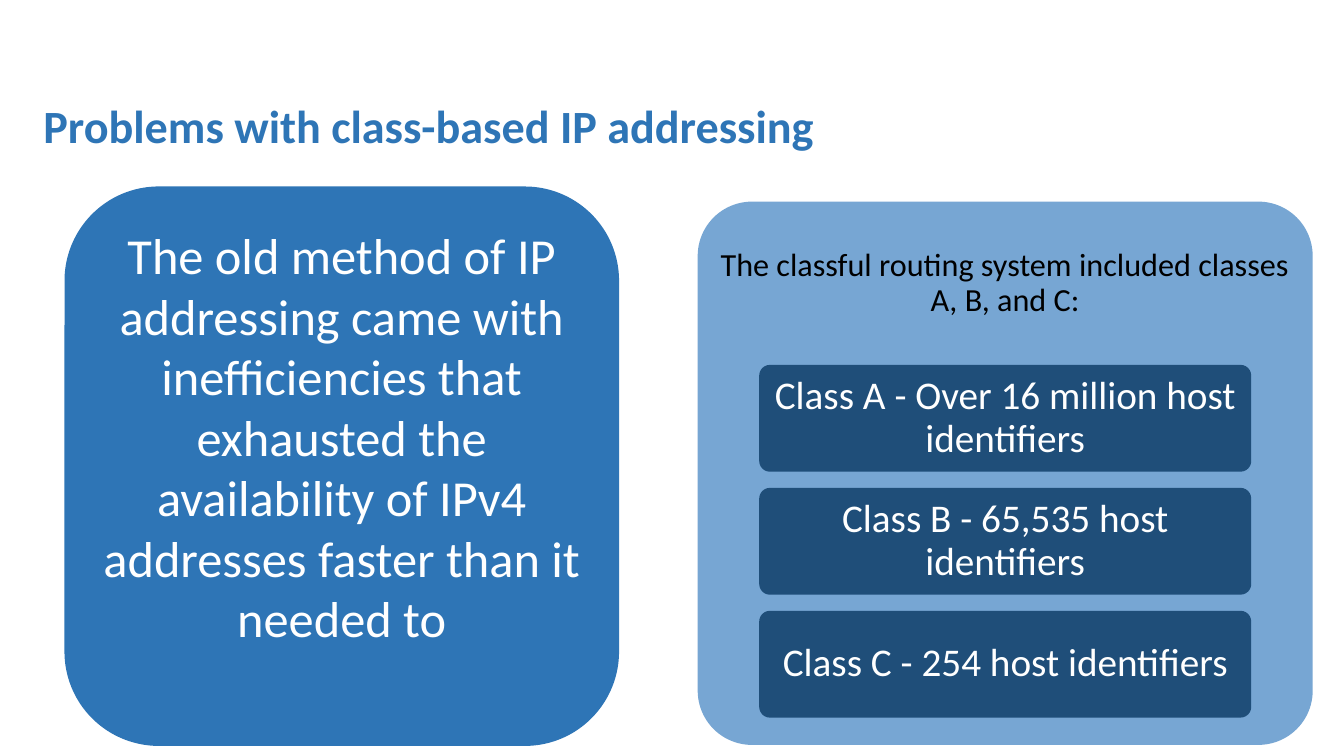
from dataclasses import dataclass

from pptx import Presentation
from pptx.dml.color import RGBColor
from pptx.enum.shapes import MSO_SHAPE
from pptx.enum.text import MSO_ANCHOR, PP_ALIGN
from pptx.util import Inches, Pt

TITLE = "Problems with class-based IP addressing"
PROBLEM = ("The old method of IP addressing came with inefficiencies that exhausted "
           "the availability of IPv4 addresses faster than it needed to")
CLASSES_HEADING = "The classful routing system included classes A, B, and C:"
CLASSES = [
    "Class A - Over 16 million host identifiers",
    "Class B - 65,535 host identifiers",
    "Class C - 254 host identifiers",
]


@dataclass(frozen=True)
class Theme:
    font: str = "Calibri"
    blue: str = "2E75B6"
    light_blue: str = "77A6D3"
    navy: str = "1F4E79"
    white: str = "FFFFFF"
    black: str = "000000"
    title_size: int = 33
    problem_size: int = 36
    heading_size: int = 23
    class_size: int = 28


THEME = Theme()
WIDTH, HEIGHT = 13.33, 7.5
TITLE_BOX = (0.33, 0.78, 12.68, 0.99)
PROBLEM_BOX = (0.64, 1.85, 5.5, 5.55)
PANEL_BOX = (6.92, 2, 6.1, 5.39)
CARD_SHARE = 0.8
CARD_TOP, CARD_HEIGHT, CARD_PITCH = 3.62, 1.06, 1.22


def write(shape, text, size, color, align=PP_ALIGN.CENTER, bold=False,
          line_spacing=0.9, margins=(0.1, 0.05, 0.1, 0.05)):
    """Fill the shape with one paragraph; margins run left, top, right, bottom."""
    frame = shape.text_frame
    frame.word_wrap = True
    frame.vertical_anchor = MSO_ANCHOR.MIDDLE
    (frame.margin_left, frame.margin_top,
     frame.margin_right, frame.margin_bottom) = map(Inches, margins)
    paragraph = frame.paragraphs[0]
    paragraph.alignment = align
    paragraph.line_spacing = line_spacing
    run = paragraph.add_run()
    run.text = text
    run.font.name = THEME.font
    run.font.size = Pt(size)
    run.font.bold = bold
    run.font.color.rgb = RGBColor.from_string(color)


def add_rounded_box(slide, box, fill, corner):
    shape = slide.shapes.add_shape(MSO_SHAPE.ROUNDED_RECTANGLE, *map(Inches, box))
    shape.adjustments[0] = corner
    shape.shadow.inherit = False
    shape.fill.solid()
    shape.fill.fore_color.rgb = RGBColor.from_string(fill)
    shape.line.fill.background()
    return shape


def main():
    presentation = Presentation()
    presentation.slide_width, presentation.slide_height = Inches(WIDTH), Inches(HEIGHT)
    slide = presentation.slides.add_slide(presentation.slide_layouts[5])

    title = slide.shapes.title
    title.left, title.top, title.width, title.height = map(Inches, TITLE_BOX)
    write(title, TITLE, THEME.title_size, THEME.blue, PP_ALIGN.LEFT, bold=True)

    panel = add_rounded_box(slide, PANEL_BOX, THEME.light_blue, 0.1)
    write(panel, CLASSES_HEADING, THEME.heading_size, THEME.black,
          margins=(0, 0, 0, 3.77))

    panel_left, _, panel_width, _ = PANEL_BOX
    card_width = panel_width * CARD_SHARE
    card_left = panel_left + (panel_width - card_width) / 2
    for row, text in enumerate(CLASSES):
        card_box = (card_left, CARD_TOP + row * CARD_PITCH, card_width, CARD_HEIGHT)
        card = add_rounded_box(slide, card_box, THEME.navy, 0.1)
        write(card, text, THEME.class_size, THEME.white,
              margins=(0.08, 0.06, 0.08, 0.06))

    problem = add_rounded_box(slide, PROBLEM_BOX, THEME.blue, 0.17)
    write(problem, PROBLEM, THEME.problem_size, THEME.white, line_spacing=1.0,
          margins=(0.1, 0.05, 0.1, 0.65))

    presentation.save("out.pptx")


if __name__ == "__main__":
    main()
